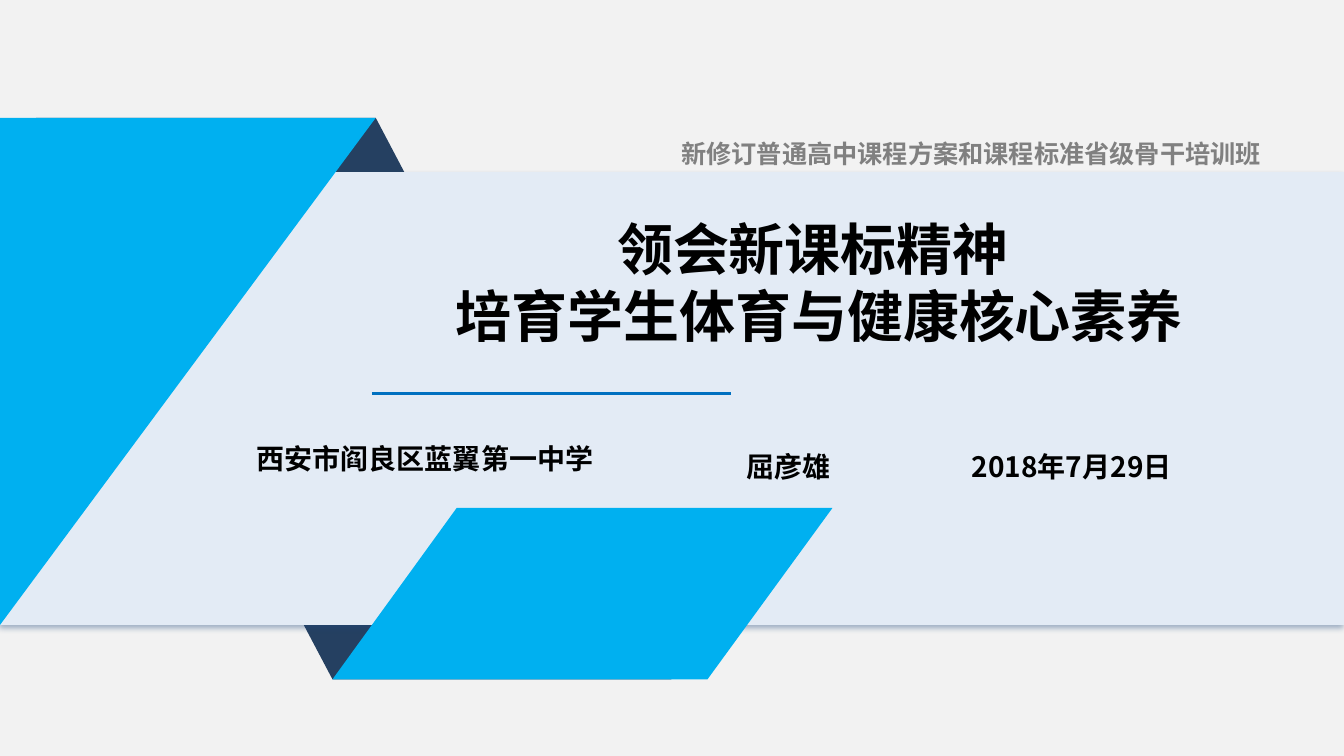
import pptx
import pptx.dml.color
import pptx.enum.shapes
import pptx.enum.text
import pptx.oxml
import pptx.util
from pptx.util import Cm

COLORS = {
    "background": "F2F2F2",
    "band": "E3EBF5",
    "fold": "254061",
    "ribbon": "00B0F0",
    "rule": "0070C0",
    "shadow": "1F497D",
    "text": "000000",
    "muted": "808080",
}
FONT = "Noto Sans CJK SC"
NS = 'xmlns:a="http://schemas.openxmlformats.org/drawingml/2006/main"'


def rgb(name):
    return pptx.dml.color.RGBColor.from_string(COLORS[name])


def xml(markup):
    return pptx.oxml.parse_xml(markup.replace(" ", f" {NS} ", 1))


def write(tf, text, size=20, color="text", align="LEFT", leading=36, wrap=True, tab=None):
    tf.word_wrap = wrap
    tf.auto_size = pptx.enum.text.MSO_AUTO_SIZE.NONE
    tf.vertical_anchor = pptx.enum.text.MSO_ANCHOR.TOP
    for i, line in enumerate(text.split("\n")):
        p = tf.add_paragraph() if i else tf.paragraphs[0]
        p.alignment = pptx.enum.text.PP_ALIGN[align]
        p.line_spacing = pptx.util.Pt(leading)
        p.space_before = p.space_after = pptx.util.Pt(0)
        if tab:
            p._p.get_or_add_pPr().append(
                xml(f'<a:tabLst ><a:tab pos="{Cm(tab)}" algn="l"/></a:tabLst>'))
        r = p.add_run()
        r.text = line
        r.font.name = FONT
        r.font.size = pptx.util.Pt(size)
        r.font.bold = True
        r.font.color.rgb = rgb(color)
        r._r.get_or_add_rPr().append(xml(f'<a:ea typeface="{FONT}"/>'))


class Deck:
    """Holds the presentation style and the current slide."""

    def __init__(self, width, height):
        self.prs = pptx.Presentation()
        self.prs.slide_width, self.prs.slide_height = Cm(width), Cm(height)

    def add_slide(self):
        self.s = self.prs.slides.add_slide(self.prs.slide_layouts[5])
        self.s.background.fill.solid()
        self.s.background.fill.fore_color.rgb = rgb("background")

    def paint(self, sp, color):
        sp.shadow.inherit = False
        sp.fill.solid()
        sp.fill.fore_color.rgb = rgb(color)
        sp.line.fill.background()

    def polygon(self, points, color):
        start, *rest = [(Cm(x), Cm(y)) for x, y in points]
        builder = self.s.shapes.build_freeform(*start)
        builder.add_line_segments(rest, close=True)
        self.paint(builder.convert_to_shape(), color)

    def band(self, x, y, w, h):
        sp = self.s.shapes.add_shape(
            pptx.enum.shapes.MSO_SHAPE.RECTANGLE, Cm(x), Cm(y), Cm(w), Cm(h))
        self.paint(sp, "band")
        sp._element.spPr.find(pptx.oxml.ns.qn("a:effectLst")).append(xml(
            '<a:outerShdw blurRad="50800" dist="38100" dir="5400000" rotWithShape="0">'
            f'<a:srgbClr val="{COLORS["shadow"]}"><a:alpha val="40000"/></a:srgbClr>'
            '</a:outerShdw>'))

    def rule(self, x1, x2, y):
        line = self.s.shapes.add_connector(
            pptx.enum.shapes.MSO_CONNECTOR.STRAIGHT, Cm(x1), Cm(y), Cm(x2), Cm(y))
        line.line.color.rgb = rgb("rule")
        line.line.width = pptx.util.Pt(2)
        line._element.spPr.append(xml("<a:effectLst />"))

    def title(self, x, y, w, h, text, **style):
        sp = self.s.shapes.title
        sp.left, sp.top, sp.width, sp.height = Cm(x), Cm(y), Cm(w), Cm(h)
        sp._element.getparent().append(sp._element)
        write(sp.text_frame, text, **style)

    def text(self, x, y, w, h, text, **style):
        sp = self.s.shapes.add_textbox(Cm(x), Cm(y), Cm(w), Cm(h))
        write(sp.text_frame, text, **style)


def main():
    width, height = 33.87, 19.05
    top, bottom = 2.97, 17.12
    band_top, band_bottom = 4.34, 15.75
    deck = Deck(width, height)
    deck.add_slide()
    deck.polygon([(16.92, bottom), (8.38, bottom), (0.91, top), (9.47, top)], "fold")
    deck.band(0, band_top, width, band_bottom - band_top)
    deck.polygon([(9.47, top), (0, band_bottom), (0, top)], "ribbon")
    deck.polygon([(11.51, 12.8), (8.38, bottom), (17.83, bottom), (20.98, 12.8)], "ribbon")
    deck.rule(9.37, 18.42, 9.91)
    deck.title(10.36, 5.28, 20.57, 3.68, "领会新课标精神 \n培育学生体育与健康核心素养",
               size=40, align="CENTER", leading=48)
    deck.text(6.22, 10.57, 14.07, 1.4, "西安市阎良区蓝翼第一中学")
    deck.text(18.57, 10.49, 14.71, 1.57, "屈彦雄\t2018年7月29日", leading=44, tab=5.67)
    deck.text(16.92, 2.77, 15.27, 1.4, "新修订普通高中课程方案和课程标准省级骨干培训班",
              size=18, color="muted", leading=38, wrap=False)
    deck.prs.save("out.pptx")


if __name__ == "__main__":
    main()
